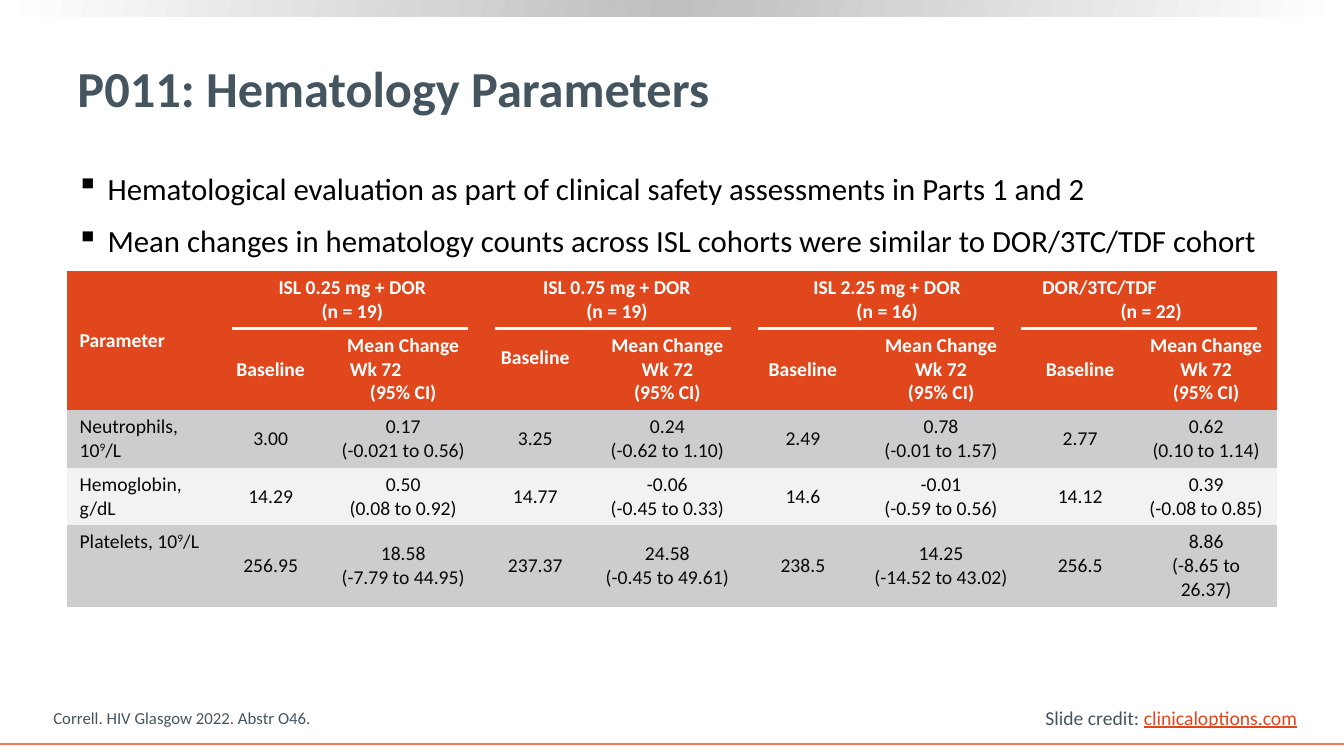
from lxml import etree
from pptx import Presentation
from pptx.dml.color import RGBColor
from pptx.enum import shapes, text
from pptx.oxml import parse_xml
from pptx.oxml.ns import nsdecls, qn
from pptx.util import Inches, Pt

COLORS = {
    "slate": "455560", "orange": "E1471D", "coral": "F47D55",
    "black": "000000", "ink": "07080A", "white": "FFFFFF",
    "silver": "BFBFBF", "gray": "CDCDCF", "pale": "F2F2F2",
}
NO_GRID_STYLE = "{2D5ABB26-0587-4C30-8999-92F81FD0307C}"
LEFT, CENTER = text.PP_ALIGN.LEFT, text.PP_ALIGN.CENTER
TOP, MIDDLE, BOTTOM = text.MSO_ANCHOR.TOP, text.MSO_ANCHOR.MIDDLE, text.MSO_ANCHOR.BOTTOM


class SlideBuilder:
    font = "Calibri"

    def __init__(self, slide):
        self.slide = slide

    def color(self, name):
        return RGBColor.from_string(COLORS[name])

    def style(self, font, size, color, bold=False):
        font.name, font.size, font.bold = self.font, Pt(size), bold
        font.color.rgb = self.color(color)

    def textbox(self, box, lines, size, color, bold=False, anchor=TOP, wrap=True):
        sp = self.slide.shapes.add_textbox(*map(Inches, box))
        tf = sp.text_frame
        tf.word_wrap, tf.vertical_anchor = wrap, anchor
        tf.text = "\n".join(lines)
        for p in tf.paragraphs:
            for r in p.runs:
                self.style(r.font, size, color, bold)
        return tf

    def bullets(self, box, lines, size, color):
        tf = self.textbox(box, lines, size, color)
        for i, p in enumerate(tf.paragraphs):
            pPr = p._p.get_or_add_pPr()
            pPr.set("marL", str(Inches(0.31)))
            pPr.set("indent", str(-Inches(0.31)))
            etree.SubElement(pPr, qn("a:buChar")).set("char", "▪")
            if i:
                p.space_before = Pt(size / 2)

    def gradient_bar(self, box, stops, angle):
        sp = self.slide.shapes.add_shape(shapes.MSO_SHAPE.RECTANGLE, *map(Inches, box))
        sp.shadow.inherit = False
        sp.line.fill.background()
        marks = "".join(
            f'<a:gs pos="{pos * 1000}"><a:srgbClr val="{COLORS[name]}"/></a:gs>'
            for pos, name in stops)
        sp._element.spPr.insert(2, parse_xml(
            f'<a:gradFill {nsdecls("a")}><a:gsLst>{marks}</a:gsLst>'
            f'<a:lin ang="{angle * 60000}" scaled="0"/></a:gradFill>'))

    def line(self, x1, x2, y, color, width):
        ln = self.slide.shapes.add_connector(
            shapes.MSO_CONNECTOR.STRAIGHT, Inches(x1), Inches(y), Inches(x2), Inches(y))
        ln.line.color.rgb = self.color(color)
        ln.line.width = Pt(width)
        etree.SubElement(ln._element.spPr, qn("a:effectLst"))

    def table(self, left, top, widths, heights):
        frame = self.slide.shapes.add_table(
            len(heights), len(widths), Inches(left), Inches(top),
            Inches(sum(widths)), Inches(sum(heights)))
        tbl = frame.table
        tbl.first_row = tbl.horz_banding = False
        tbl._tbl.tblPr.find(qn("a:tableStyleId")).text = NO_GRID_STYLE
        for column, width in zip(tbl.columns, widths):
            column.width = Inches(width)
        for row, height in zip(tbl.rows, heights):
            row.height = Inches(height)
        return tbl

    def cell(self, cell, content, fill, color, bold=False, align=CENTER, anchor=MIDDLE):
        cell.fill.solid()
        cell.fill.fore_color.rgb = self.color(fill)
        cell.margin_left = cell.margin_right = Inches(0.13)
        cell.margin_top = cell.margin_bottom = Inches(0.05)
        cell.vertical_anchor = anchor
        cell.text_frame.text = content
        for p in cell.text_frame.paragraphs:
            p.alignment = align
            for r in p.runs:
                self.style(r.font, 14, color, bold)

    def indent_line(self, p, indent):
        p.alignment = LEFT
        p._p.get_or_add_pPr().set("marL", str(Inches(indent)))

    def superscript(self, cell, before, raised, after):
        p = cell.text_frame.paragraphs[0]
        p.text = before
        for part in (raised, after):
            p.add_run().text = part
        for r in p.runs:
            self.style(r.font, 14, "ink")
        p.runs[1].font._element.set("baseline", "30000")


def main():
    prs = Presentation()
    prs.slide_width, prs.slide_height = Inches(13.33), Inches(7.5)
    s = SlideBuilder(prs.slides.add_slide(prs.slide_layouts[6]))

    # Frame of the slide
    s.gradient_bar((0, 0, 13.33, 0.16), [(0, "white"), (50, "silver"), (100, "white")], 190)
    s.line(0, 13.33, 7.38, "coral", 1.5)
    credit = s.textbox((10.27, 6.95, 2.72, 0.34), ["Slide credit: "], 14, "slate", wrap=False)
    r = credit.paragraphs[0].add_run()
    r.text = "clinicaloptions.com"
    s.style(r.font, 14, "orange")
    r.font.underline = True

    # Title
    s.textbox((0.67, 0.26, 11.89, 1.21), ["P011: Hematology Parameters"], 36, "slate",
              bold=True, anchor=MIDDLE)

    # Table header
    tbl = s.table(0.66, 2.69, [1.52, 1.01, 1.62, 1, 1.62, 1.07, 1.67, 1.09, 1.41],
                  [0.57, 0.81, 0.57, 0.57, 0.81])
    header = dict(fill="orange", color="white", bold=True)
    tbl.cell(0, 0).merge(tbl.cell(1, 0))
    s.cell(tbl.cell(0, 0), "Parameter", align=LEFT, **header)
    cohorts = [("ISL 0.25 mg + DOR", 19), ("ISL 0.75 mg + DOR", 19),
               ("ISL 2.25 mg + DOR", 16), ("DOR/3TC/TDF", 22)]
    for i, (cohort, n) in enumerate(cohorts):
        col = 1 + 2 * i
        tbl.cell(0, col).merge(tbl.cell(0, col + 1))
        s.cell(tbl.cell(0, col), f"{cohort}\n(n = {n})", **header)
        s.cell(tbl.cell(1, col), "Baseline", **header)
        s.cell(tbl.cell(1, col + 1), "Mean Change\nWk 72\n(95% CI)", **header)
    s.indent_line(tbl.cell(0, 7).text_frame.paragraphs[0], 0.04)
    s.indent_line(tbl.cell(1, 2).text_frame.paragraphs[1], 0.15)
    tbl.cell(1, 3).margin_bottom = Inches(0.29)

    # Table body
    results = [
        ("Neutrophils, 10⁹/L",
         ["3.00", "0.17\n(-0.021 to 0.56)", "3.25", "0.24\n(-0.62 to 1.10)",
          "2.49", "0.78\n(-0.01 to 1.57)", "2.77", "0.62\n(0.10 to 1.14)"]),
        ("Hemoglobin, g/dL",
         ["14.29", "0.50\n(0.08 to 0.92)", "14.77", "-0.06\n(-0.45 to 0.33)",
          "14.6", "-0.01\n(-0.59 to 0.56)", "14.12", "0.39\n(-0.08 to 0.85)"]),
        ("Platelets, 10⁹/L",
         ["256.95", "18.58\n(-7.79 to 44.95)", "237.37", "24.58\n(-0.45 to 49.61)",
          "238.5", "14.25\n(-14.52 to 43.02)", "256.5", "8.86\n(-8.65 to 26.37)"]),
    ]
    for row, (parameter, values) in enumerate(results, start=2):
        fill = "pale" if row % 2 else "gray"
        s.cell(tbl.cell(row, 0), parameter, fill, "ink", align=LEFT, anchor=TOP)
        before, raised, after = parameter.partition("⁹")
        if raised:
            s.superscript(tbl.cell(row, 0), before, "9", after)
        for col, value in enumerate(values, start=1):
            s.cell(tbl.cell(row, col), value, fill, "ink")

    # Key points
    s.bullets((0.66, 1.63, 12.01, 1.03), [
        "Hematological evaluation as part of clinical safety assessments in Parts 1 and 2",
        "Mean changes in hematology counts across ISL cohorts were similar to DOR/3TC/TDF cohort",
    ], 22, "black")

    # Rules under the cohort names
    for i in range(len(cohorts)):
        x = 2.3 + 2.61 * i
        s.line(x, x + 2.34, 3.26, "white", 2.25)

    # Citation
    s.textbox((0.43, 6.97, 8.59, 0.3), ["Correll. HIV Glasgow 2022. Abstr O46."], 12, "slate",
              anchor=BOTTOM)

    prs.save("out.pptx")


if __name__ == "__main__":
    main()
